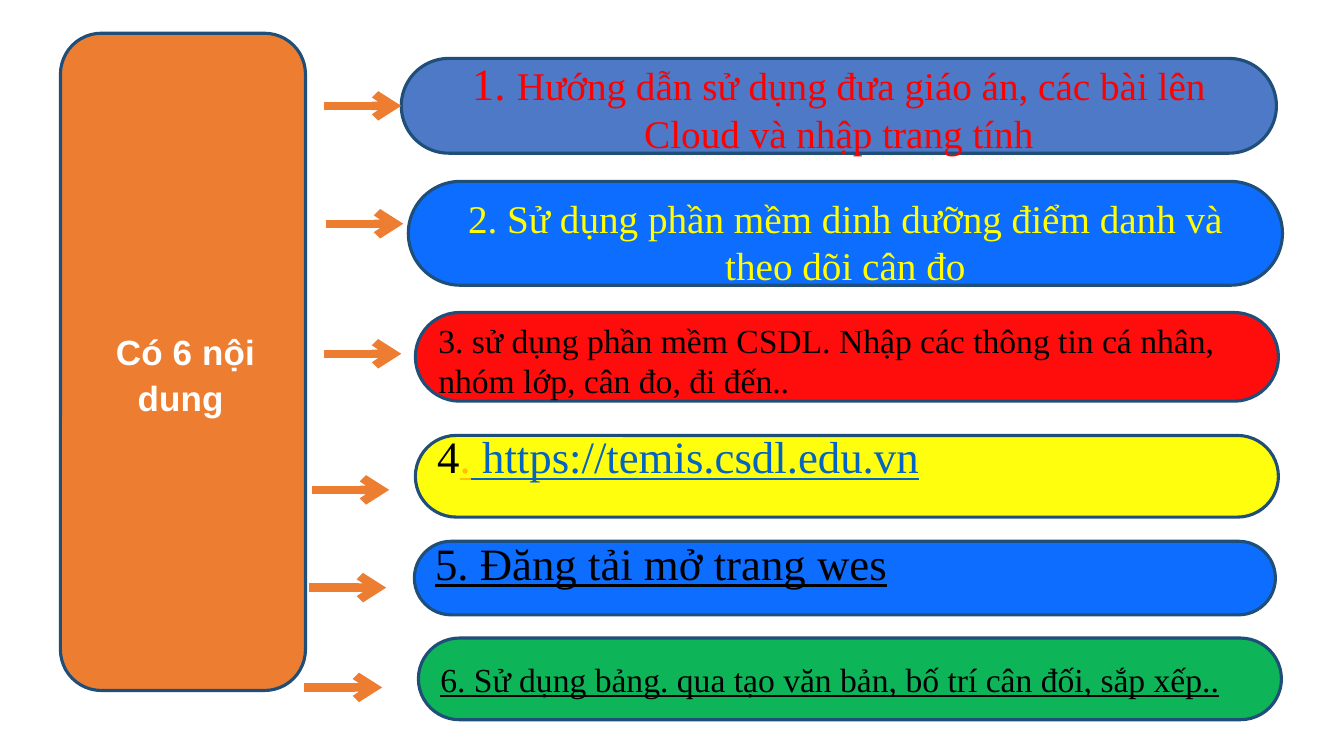
"""Build a slide with one orange box, six arrows and six topic pills."""
import pptx
import pptx.util
import pptx.dml.color
import pptx.enum.shapes
import pptx.enum.text
import pptx.oxml
import pptx.oxml.ns

Inches = pptx.util.Inches
Pt = pptx.util.Pt
RGBColor = pptx.dml.color.RGBColor
MSO_SHAPE = pptx.enum.shapes.MSO_SHAPE
ALIGN = pptx.enum.text.PP_ALIGN
ANCHOR = pptx.enum.text.MSO_ANCHOR
NS = pptx.oxml.ns.nsdecls("a")

ORANGE = RGBColor(0xED, 0x7D, 0x31)
NAVY = RGBColor(0x1F, 0x4E, 0x79)
STEEL = RGBColor(0x44, 0x72, 0xC4)
BLUE = RGBColor(0x00, 0x66, 0xFF)
RED = RGBColor(0xFF, 0x00, 0x00)
YELLOW = RGBColor(0xFF, 0xFF, 0x00)
GREEN = RGBColor(0x00, 0xB0, 0x50)
GOLD = RGBColor(0xFF, 0xC0, 0x00)
LINK = RGBColor(0x05, 0x63, 0xC1)
BLACK = RGBColor(0x00, 0x00, 0x00)
WHITE = RGBColor(0xFF, 0xFF, 0xFF)
SERIF = "Times New Roman"

deck = pptx.Presentation()
deck.slide_width, deck.slide_height = Inches(13.33), Inches(7.5)
slide = deck.slides.add_slide(deck.slide_layouts[6])
shapes = slide.shapes


def add_run(para, text, color, **format):
    run = para.add_run()
    run.text = text
    run.font.color.rgb = color
    for key, value in format.items():
        setattr(run.font, key, value)
    return run


def add_block(kind, box, fill):
    block = shapes.add_shape(kind, *map(Inches, box))
    block.shadow.inherit = False
    block.fill.solid()
    block.fill.fore_color.rgb = fill
    block.line.color.rgb = NAVY
    block.line.width = Pt(2.25)
    return block


add_block(MSO_SHAPE.FLOWCHART_ALTERNATE_PROCESS, (0.6, 0.33, 2.43, 6.52), ORANGE)

title = shapes.add_textbox(Inches(0.64), Inches(2.31), Inches(2.4), Inches(1.89))
frame = title.text_frame
frame.word_wrap = True
frame.vertical_anchor = ANCHOR.BOTTOM
para = frame.paragraphs[0]
para.alignment = ALIGN.CENTER
para.line_spacing = 1.1
run = add_run(para, "Có 6 nội dung ", WHITE, size=Pt(25), bold=True, name="Arial")
run.font._element.set("spc", "10")

topics = [
    ((3.98, 0.58, 8.68, 0.94), STEEL, ALIGN.CENTER, 0,
     [("1. ", RED, 32, False),
      ("Hướng dẫn sử dụng đưa giáo án, các bài lên Cloud và nhập trang tính", RED, 28, False)]),
    ((4.05, 1.8, 8.67, 1.03), BLUE, ALIGN.CENTER, 0.08,
     [("2. Sử dụng phần mềm dinh dưỡng điểm danh và theo dõi cân đo", YELLOW, 28, False)]),
    ((4.12, 3.1, 8.56, 0.88), RED, ALIGN.LEFT, 0.03,
     [("3. sử dụng phần mềm CSDL. Nhập các thông tin cá nhân, nhóm lớp, cân đo, đi đến..",
       BLACK, 24, False)]),
    ((4.12, 4.32, 8.56, 0.81), YELLOW, ALIGN.LEFT, -0.2,
     [("4", BLACK, 32, False), (".", GOLD, 32, True),
      (" https://temis.csdl.edu.vn", LINK, 32, True)]),
    ((4.11, 5.37, 8.54, 0.73), BLUE, ALIGN.LEFT, -0.15,
     [("5. Đăng tải mở trang wes", BLACK, 32, True)]),
    ((4.15, 6.33, 8.56, 0.81), GREEN, ALIGN.LEFT, 0,
     [("6. Sử dụng bảng. qua tạo văn bản, bố trí cân đối, sắp xếp..", BLACK, 24, True)]),
]
pills = []
for box, fill, align, shift, runs in topics:
    pill = add_block(MSO_SHAPE.ROUNDED_RECTANGLE, box, fill)
    pill.adjustments[0] = 0.5
    tint = pill._element.spPr.find(pptx.oxml.ns.qn("a:solidFill"))[0]
    tint.append(pptx.oxml.parse_xml(f'<a:alpha {NS} val="95000"/>'))
    frame = pill.text_frame
    frame.word_wrap = True
    frame.vertical_anchor = ANCHOR.MIDDLE
    frame.margin_top = Inches(0.05 + max(2 * shift, 0))
    frame.margin_bottom = Inches(0.05 + max(-2 * shift, 0))
    para = frame.paragraphs[0]
    para.alignment = align
    for text, color, size, under in runs:
        add_run(para, text, color, size=Pt(size), underline=under, name=SERIF)
    pills.append(pill)

starts = [(3.21, 1.05), (3.23, 2.22), (3.21, 3.51), (3.09, 4.86), (3.06, 5.83), (3.02, 6.82)]
for left, top in starts:
    arrow = shapes.add_connector(
        pptx.enum.shapes.MSO_CONNECTOR.STRAIGHT,
        Inches(left), Inches(top), Inches(left + 0.77), Inches(top))
    arrow.line.color.rgb = ORANGE
    arrow.line.width = Pt(6)
    arrow.line._get_or_add_ln().append(
        pptx.oxml.parse_xml(f'<a:tailEnd {NS} type="arrow"/>'))
    arrow._element.spPr.append(pptx.oxml.parse_xml(f"<a:effectLst {NS}/>"))
    if top == starts[0][1]:
        arrow.end_connect(pills[0], 1)

deck.save("out.pptx")
